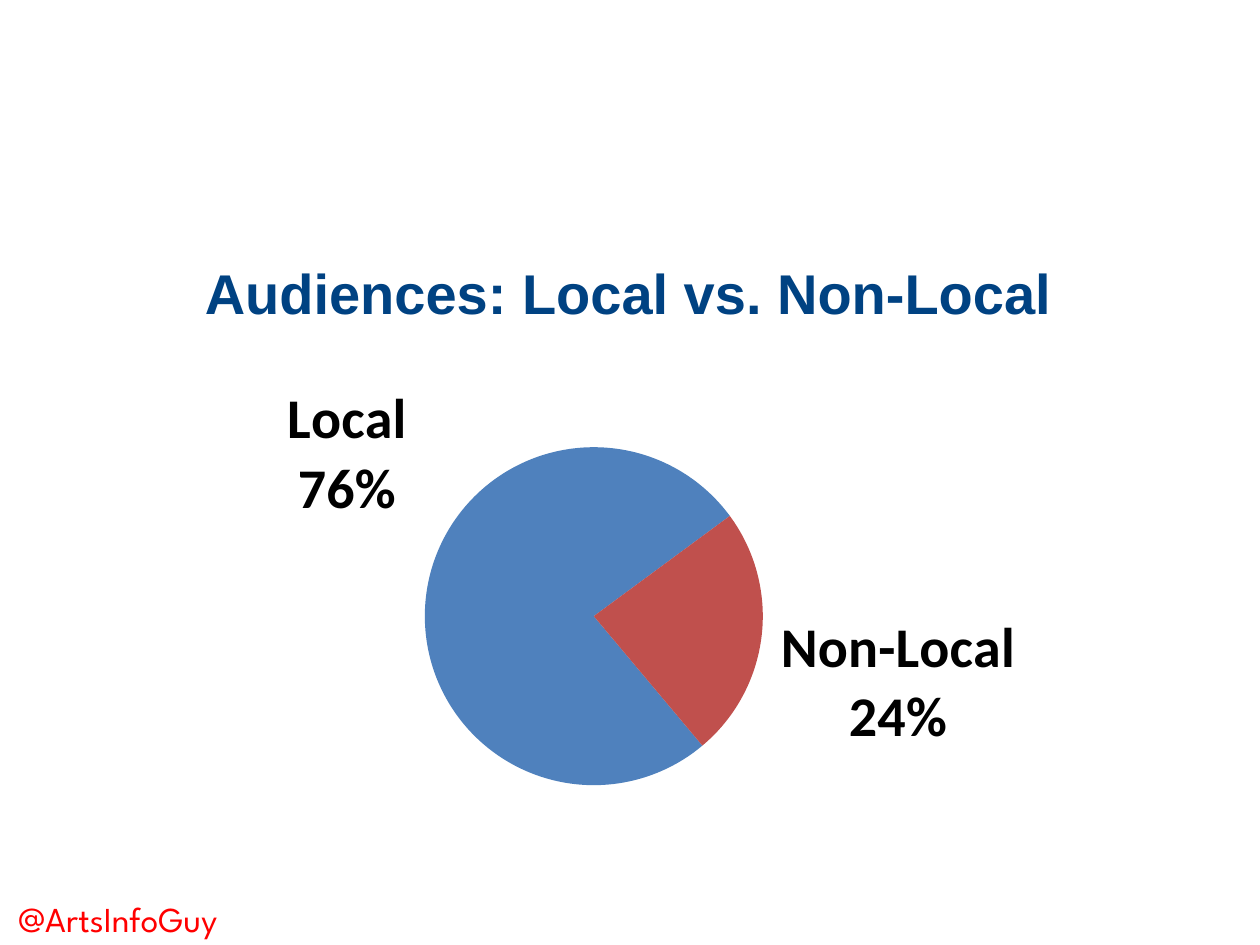
from lxml.etree import SubElement
from pptx import Presentation
from pptx.chart.data import CategoryChartData
from pptx.dml.color import RGBColor
from pptx.enum.chart import XL_CHART_TYPE, XL_LABEL_POSITION
from pptx.enum.text import MSO_ANCHOR, PP_ALIGN
from pptx.oxml import parse_xml
from pptx.oxml.ns import nsdecls, qn
from pptx.util import Cm, Pt

COLORS = {
    "title": "004282",
    "handle": "FF0000",
    "label": "000000",
    "Local": "4F81BD",
    "Non-Local": "C0504D",
}
AUDIENCES = {"Local": 76, "Non-Local": 24}
LABEL_SHIFTS = {"Local": (-0.01, -0.15), "Non-Local": (0.01, -0.05)}
PLOT_AREA = {"x": 0.34, "y": 0.16, "w": 0.37, "h": 0.71}
FIRST_SLICE_ANGLE = 140


def style_font(font, name, size, color, bold=False):
    font.name, font.size, font.bold = name, Pt(size), bold
    font.color.rgb = RGBColor.from_string(COLORS[color])


def manual_layout(values, inner=False):
    """Return a c:layout element placing a chart part by fractions of the chart."""
    layout = parse_xml(f"<c:layout {nsdecls('c')}><c:manualLayout/></c:layout>")
    manual = layout[0]
    if inner:
        SubElement(manual, qn("c:layoutTarget"), val="inner")
        for mode in ("xMode", "yMode"):
            SubElement(manual, qn(f"c:{mode}"), val="edge")
    for key, value in values.items():
        SubElement(manual, qn(f"c:{key}"), val=str(value))
    return layout


def add_title(slide, text):
    title = slide.shapes.title
    title.left, title.top, title.width, title.height = Cm(-0.03), Cm(5.08), Cm(25.4), Cm(2.41)
    frame = title.text_frame
    frame.text = text
    frame.vertical_anchor = MSO_ANCHOR.TOP
    frame.paragraphs[0].alignment = PP_ALIGN.CENTER
    style_font(frame.paragraphs[0].runs[0].font, "Arial", 32, "title", bold=True)


def label_slice(series, index, audience):
    """Show category and percentage outside the slice, shifted from the default place."""
    label = series.points[index].data_label
    style_font(label.font, "Calibri", 32, "label", bold=True)
    label.position = XL_LABEL_POSITION.OUTSIDE_END
    element = series._element.xpath(f".//c:dLbl[c:idx/@val='{index}']")[0]
    for flag, shown in (("showVal", "0"), ("showCatName", "1"), ("showPercent", "1")):
        element.find(qn(f"c:{flag}")).set("val", shown)
    SubElement(element, qn("c:separator")).text = "\n"
    layout = manual_layout(dict(zip("xy", LABEL_SHIFTS[audience])))
    element.find(qn("c:idx")).addnext(layout)
    layout.addnext(parse_xml(
        f'<c:numFmt {nsdecls("c")} formatCode="0%" sourceLinked="0"/>'))


def hide_leader_lines(series):
    labels = series._element.find(qn("c:dLbls"))
    for leader_lines in labels.findall(qn("c:showLeaderLines")):
        labels.remove(leader_lines)
    SubElement(labels, qn("c:showLeaderLines"), val="0")


def add_audience_pie(slide):
    data = CategoryChartData()
    data.categories = list(AUDIENCES)
    data.add_series("Series 1", list(AUDIENCES.values()))
    chart = slide.shapes.add_chart(
        XL_CHART_TYPE.PIE, Cm(-0.55), Cm(7.48), Cm(23.85), Cm(9.6), data).chart
    chart.has_title = False
    chart.has_legend = False
    style_font(chart.font, "Lato", 21.5, "label", bold=True)

    plot = chart.plots[0]
    plot.vary_by_categories = True
    series = plot.series[0]
    for index, audience in enumerate(AUDIENCES):
        fill = series.points[index].format.fill
        fill.solid()
        fill.fore_color.rgb = RGBColor.from_string(COLORS[audience])
        label_slice(series, index, audience)
    hide_leader_lines(series)

    pie = chart._chartSpace.xpath(".//c:pieChart")[0]
    for angle in pie.findall(qn("c:firstSliceAng")):
        pie.remove(angle)
    SubElement(pie, qn("c:firstSliceAng"), val=str(FIRST_SLICE_ANGLE))
    plot_area = pie.getparent()
    for layout in plot_area.findall(qn("c:layout")):
        plot_area.remove(layout)
    plot_area.insert(0, manual_layout(PLOT_AREA, inner=True))


def add_handle(slide, text):
    frame = slide.shapes.add_textbox(Cm(0.12), Cm(17.96), Cm(5.46), Cm(0.94)).text_frame
    frame.word_wrap = True
    frame.text = text
    style_font(frame.paragraphs[0].runs[0].font, "League Spartan", 20, "handle")


def main():
    presentation = Presentation()
    presentation.slide_width, presentation.slide_height = Cm(25.4), Cm(19.05)
    slide = presentation.slides.add_slide(presentation.slide_layouts[5])
    add_title(slide, "Audiences: Local vs. Non-Local")
    add_audience_pie(slide)
    add_handle(slide, "@ArtsInfoGuy")
    presentation.save("out.pptx")


if __name__ == "__main__":
    main()
